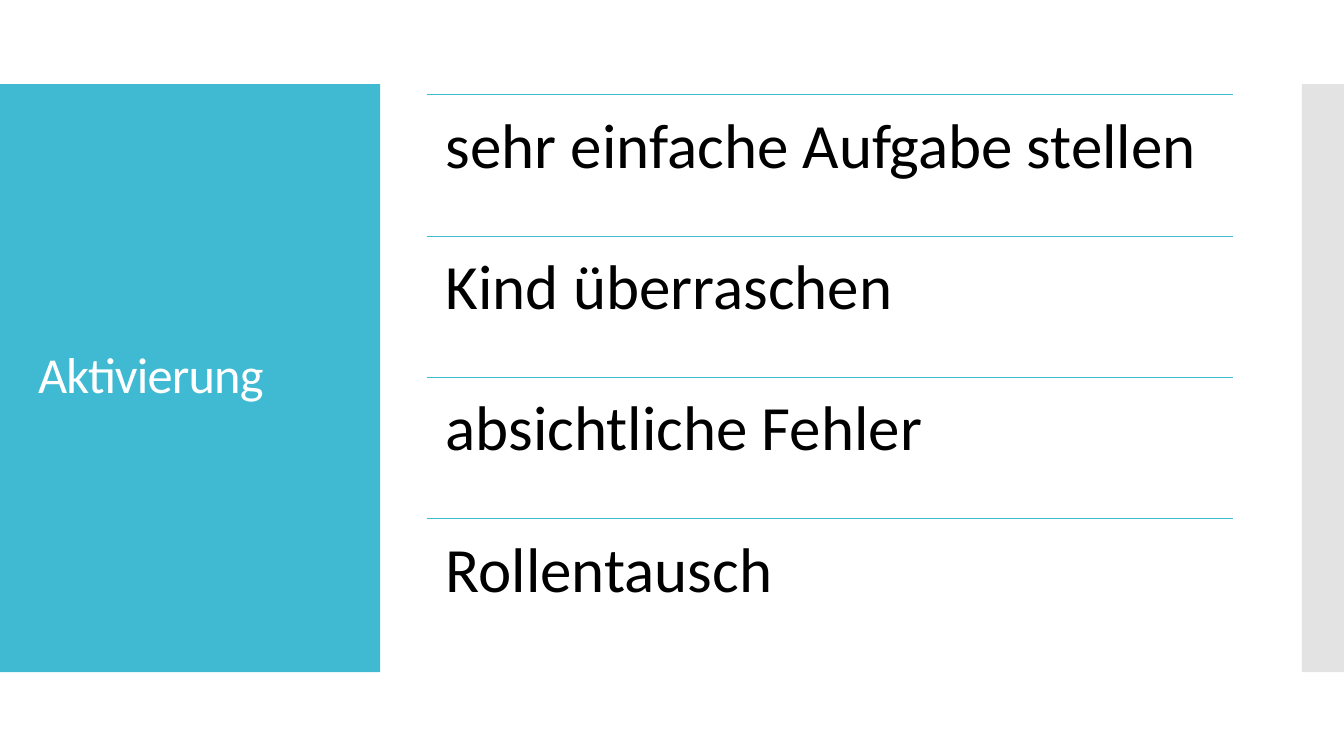
from lxml.etree import SubElement
from pptx import Presentation
from pptx.dml.color import RGBColor
from pptx.enum.shapes import MSO_CONNECTOR, MSO_SHAPE
from pptx.enum.text import MSO_ANCHOR
from pptx.oxml.ns import qn
from pptx.util import Cm, Pt

TITLE = "Aktivierung"
IDEAS = [
    "sehr einfache Aufgabe stellen",
    "Kind überraschen",
    "absichtliche Fehler",
    "Rollentausch",
]
COLORS = {"accent": "40BAD2", "side": "C8C8C8", "title": "FFFFFF", "text": "000000"}
FONT = "Calibri"

SLIDE_WIDTH, SLIDE_HEIGHT = 33.87, 19.05
BAND_TOP, BAND_HEIGHT = 2.12, 14.82
PANEL_WIDTH, SIDE_WIDTH = 9.58, 1.06
LIST_LEFT, LIST_TOP, LIST_WIDTH, ROW_HEIGHT = 10.75, 2.39, 20.32, 3.56
ROW_INSET = 0.48


def add_band(slide, left, width, color, opacity=100):
    shape = slide.shapes.add_shape(
        MSO_SHAPE.RECTANGLE, Cm(left), Cm(BAND_TOP), Cm(width), Cm(BAND_HEIGHT)
    )
    shape.shadow.inherit = False
    shape.fill.solid()
    shape.fill.fore_color.rgb = RGBColor.from_string(COLORS[color])
    shape.line.fill.background()
    if opacity < 100:
        fill_color = shape.fill._xPr.find(qn("a:solidFill"))[0]
        SubElement(fill_color, qn("a:alpha")).set("val", str(opacity * 1000))


def add_text(slide, box, text, size, color, inset=None):
    shape = slide.shapes.add_textbox(*(Cm(length) for length in box))
    frame = shape.text_frame
    frame.word_wrap = True
    frame.text = text
    if inset is not None:
        frame.margin_left = frame.margin_right = Cm(inset)
        frame.margin_top = frame.margin_bottom = Cm(inset)
    paragraph = frame.paragraphs[0]
    paragraph.line_spacing = 0.9
    font = paragraph.runs[0].font
    font.name = FONT
    font.size = Pt(size)
    font.color.rgb = RGBColor.from_string(COLORS[color])
    return frame


def add_rule(slide, top):
    connector = slide.shapes.add_connector(
        MSO_CONNECTOR.STRAIGHT,
        Cm(LIST_LEFT), Cm(top), Cm(LIST_LEFT + LIST_WIDTH), Cm(top),
    )
    connector.line.color.rgb = RGBColor.from_string(COLORS["accent"])
    connector.line.width = Pt(0.85)
    SubElement(connector._element.spPr, qn("a:effectLst"))


def main():
    presentation = Presentation()
    presentation.slide_width = Cm(SLIDE_WIDTH)
    presentation.slide_height = Cm(SLIDE_HEIGHT)
    slide = presentation.slides.add_slide(presentation.slide_layouts[6])

    add_band(slide, 0, PANEL_WIDTH, "accent")
    add_band(slide, SLIDE_WIDTH - SIDE_WIDTH, SIDE_WIDTH, "side", opacity=50)

    title = add_text(slide, (0.71, 3.12, 8.18, 12.78), TITLE, 36, "title")
    title.vertical_anchor = MSO_ANCHOR.MIDDLE
    title.paragraphs[0].runs[0]._r.get_or_add_rPr().set("spc", "-60")

    for row, idea in enumerate(IDEAS):
        top = LIST_TOP + row * ROW_HEIGHT
        add_rule(slide, top)
        box = (LIST_LEFT, top, LIST_WIDTH, ROW_HEIGHT)
        add_text(slide, box, idea, 45, "text", ROW_INSET)

    presentation.save("out.pptx")


if __name__ == "__main__":
    main()
